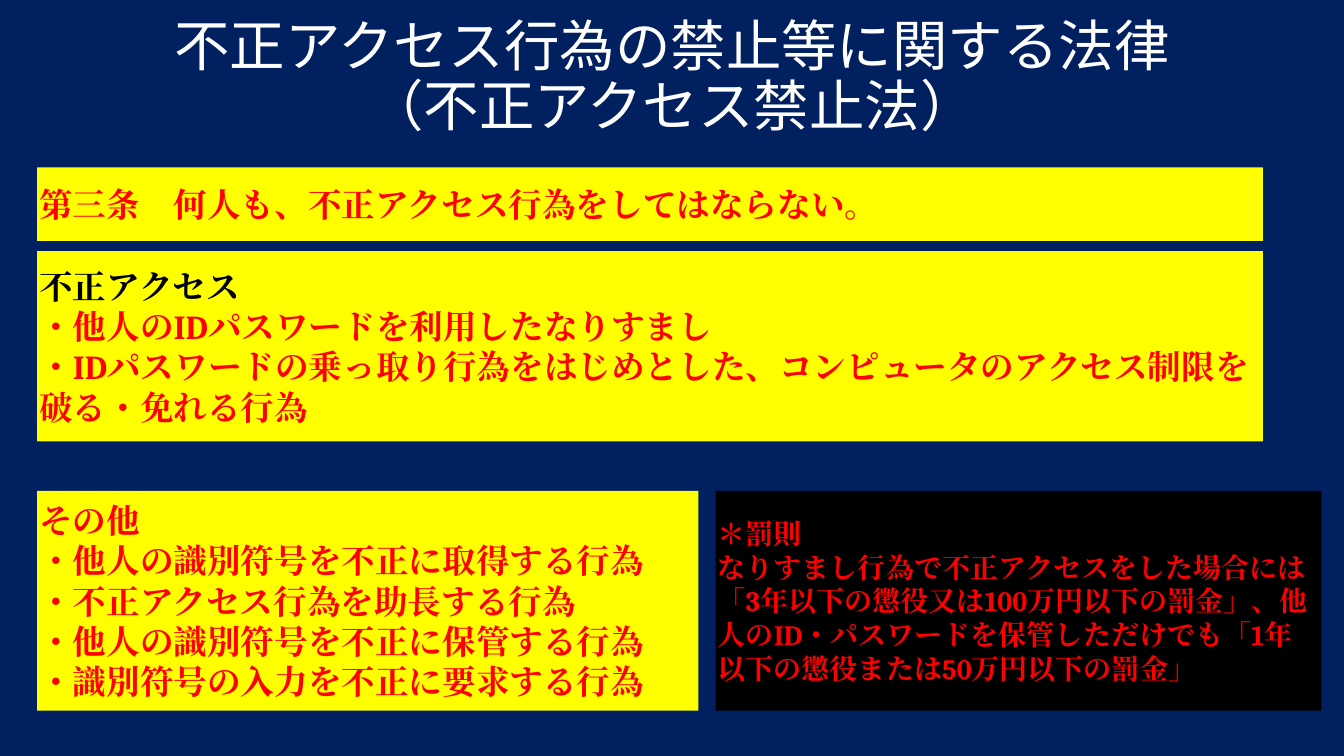
from lxml import etree
from pptx import Presentation
from pptx.dml.color import RGBColor
from pptx.enum import shapes, text
from pptx.oxml import ns
from pptx.util import Pt

COLORS = {
    "navy": "002060",
    "yellow": "FFFF00",
    "red": "FF0000",
    "black": "000000",
    "white": "FFFFFF",
}
LEFT = 26.6
WIDE = 875.5
LOW = 350.6
TALL = 157


def color(name):
    return RGBColor.from_string(COLORS[name])


def style(para, face, size, ink, bold=False):
    for run in para.runs:
        font = run.font
        font.name, font.size, font.bold = face, Pt(size), bold
        font.color.rgb = color(ink)
        east = etree.SubElement(run._r.get_or_add_rPr(), ns.qn("a:ea"))
        east.set("typeface", face)


def add_title(slide, words):
    box = slide.shapes.add_textbox(Pt(0), Pt(10), Pt(960), Pt(92))
    frame = box.text_frame
    frame.word_wrap = True
    frame.vertical_anchor = text.MSO_ANCHOR.MIDDLE
    para = frame.paragraphs[0]
    para.text = words
    para.alignment = text.PP_ALIGN.CENTER
    para.line_spacing = 0.9
    style(para, "Calibri", 39.6, "white")


def add_panel(slide, place, lines, fill="yellow", size=24, head="red"):
    panel = slide.shapes.add_shape(
        shapes.MSO_SHAPE.RECTANGLE, *[Pt(n) for n in place])
    panel.shadow.inherit = False
    panel.fill.solid()
    panel.fill.fore_color.rgb = color(fill)
    panel.line.fill.background()
    frame = panel.text_frame
    frame.word_wrap = True
    frame.vertical_anchor = text.MSO_ANCHOR.MIDDLE
    frame.margin_left = frame.margin_right = Pt(1.5)
    frame.margin_top = frame.margin_bottom = Pt(1.5)
    frame.text = "\n".join(lines)
    for i, para in enumerate(frame.paragraphs):
        para.alignment = text.PP_ALIGN.LEFT
        style(para, "Cambria", size, "red" if i else head, True)


def main():
    deck = Presentation()
    deck.slide_width, deck.slide_height = Pt(960), Pt(540)
    slide = deck.slides.add_slide(deck.slide_layouts[6])
    back = slide.background.fill
    back.solid()
    back.fore_color.rgb = color("navy")

    add_title(slide, "不正アクセス行為の禁止等に関する法律\v（不正アクセス禁止法）")
    add_panel(slide, (LEFT, 119.5, WIDE, 52.6), [
        "第三条　何人も、不正アクセス行為をしてはならない。",
    ])
    add_panel(slide, (LEFT, 179.3, WIDE, 136.1), [
        "不正アクセス",
        "・他人のIDパスワードを利用したなりすまし",
        "・IDパスワードの乗っ取り行為をはじめとした、"
        "コンピュータのアクセス制限を破る・免れる行為",
    ], head="black")
    add_panel(slide, (LEFT, LOW, 472.3, TALL), [
        "その他",
        "・他人の識別符号を不正に取得する行為",
        "・不正アクセス行為を助長する行為",
        "・他人の識別符号を不正に保管する行為",
        "・識別符号の入力を不正に要求する行為",
    ])
    add_panel(slide, (511.2, LOW, 432.7, TALL), [
        "＊罰則",
        "なりすまし行為で不正アクセスをした場合には"
        "「3年以下の懲役又は100万円以下の罰金」、"
        "他人のID・パスワードを保管しただけでも"
        "「1年以下の懲役または50万円以下の罰金」",
    ], fill="black", size=20)
    deck.save("out.pptx")


if __name__ == "__main__":
    main()
